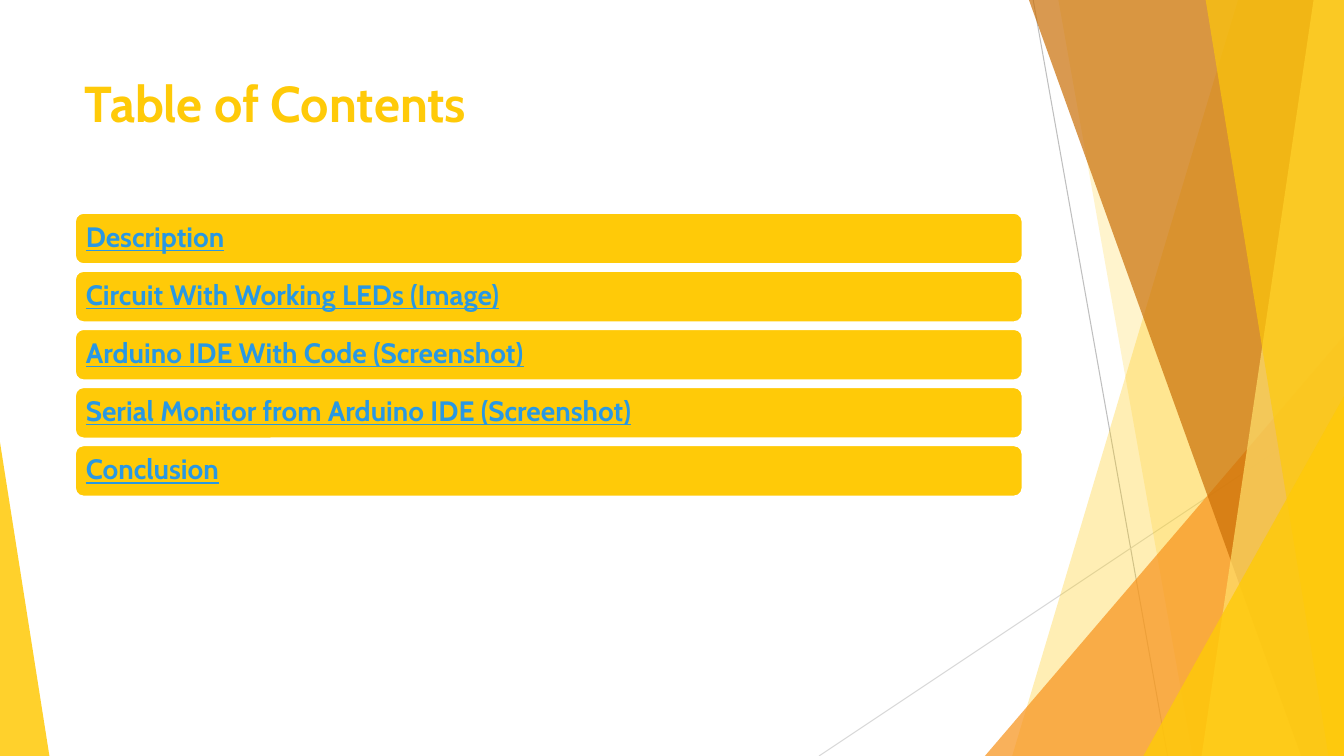
from pptx import Presentation, util as u
from pptx.dml.color import RGBColor
from pptx.enum import shapes, text
from pptx.oxml.ns import qn
from lxml import etree

HUES = {
    "gold": "FFCA08", "pale": "FFDF6B", "orange": "F8931D", "brown": "CA6F06",
    "gray": "BFBFBF", "light": "D9D9D9", "link": "2998E3", "white": "FFFFFF",
}
WIDE, HIGH = 960, 540


def paint(shape, hue, alpha=100):
    shape.shadow.inherit = False
    shape.fill.solid()
    shape.fill.fore_color.rgb = RGBColor.from_string(HUES[hue])
    shape.line.fill.background()
    if alpha < 100:
        color = shape.fill._xPr.find(qn("a:solidFill"))[0]
        etree.SubElement(color, qn("a:alpha"), val=str(alpha * 1000))


def write(para, words, size, hue):
    run = para.add_run()
    run.text = words
    run.font.name = "Cabin"
    run.font.size = u.Pt(size)
    run.font.bold = True
    run.font.color.rgb = RGBColor.from_string(HUES[hue])
    return run


deck = Presentation()
deck.slide_width, deck.slide_height = u.Pt(WIDE), u.Pt(HIGH)
slide = deck.slides.add_slide(deck.slide_layouts[6])

for x1, y1, x2, y2, hue in [
    (738, 0, 834, HIGH, "gray"),
    (WIDE, 290, 585, HIGH, "light"),
]:
    line = slide.shapes.add_connector(
        shapes.MSO_CONNECTOR.STRAIGHT, u.Pt(x1), u.Pt(y1), u.Pt(x2), u.Pt(y2))
    line.line.color.rgb = RGBColor.from_string(HUES[hue])
    line.line.width = u.Pt(0.75)
    etree.SubElement(line._element.spPr, qn("a:effectLst"))

facets = [
    ("pane", 884.3, 723, "gold", 30),
    ("pane", 756, 852, "gold", 20),
    ("wedge", 703.5, 240, "orange", 72),
    ("pane", 735, 929.5, "brown", 70),
    ("pane", 938.3, 858.3, "pale", 70),
    ("pane", 861.2, 949, "gold", 65),
    ("wedge", 816.7, 283, "gold", 80),
]
for kind, start, end, hue, alpha in facets:
    if kind == "pane":
        path = slide.shapes.build_freeform(u.Pt(start), 0)
        path.add_line_segments([
            (u.Pt(WIDE), 0), (u.Pt(WIDE), u.Pt(HIGH)), (u.Pt(end), u.Pt(HIGH))])
        facet = path.convert_to_shape()
    else:
        facet = slide.shapes.add_shape(
            shapes.MSO_SHAPE.ISOSCELES_TRIANGLE,
            u.Pt(start), u.Pt(end), u.Pt(WIDE - start), u.Pt(HIGH - end))
        facet.adjustments[0] = 1
    paint(facet, hue, alpha)

edge = slide.shapes.add_shape(
    shapes.MSO_SHAPE.ISOSCELES_TRIANGLE, 0, u.Pt(316), u.Pt(35.3), u.Pt(224))
edge.adjustments[0] = 0
paint(edge, "gold", 85)

title = slide.shapes.add_textbox(u.Pt(53.5), u.Pt(48), u.Pt(677), u.Pt(104))
title.text_frame.word_wrap = True
write(title.text_frame.paragraphs[0], "Table of Contents", 36, "gold")

topics = [
    "Description",
    "Circuit With Working LEDs (Image)",
    "Arduino IDE With Code (Screenshot)",
    "Serial Monitor from Arduino IDE (Screenshot)",
    "Conclusion",
]
for row, topic in enumerate(topics):
    bar = slide.shapes.add_shape(
        shapes.MSO_SHAPE.ROUNDED_RECTANGLE,
        u.Pt(53.5), u.Pt(152 + row * 41.5), u.Pt(677), u.Pt(36.8))
    paint(bar, "gold")
    bar.line.color.rgb = RGBColor.from_string(HUES["white"])
    bar.line.width = u.Pt(1.5)
    frame = bar.text_frame
    frame.word_wrap = True
    frame.vertical_anchor = text.MSO_ANCHOR.MIDDLE
    frame.margin_left = frame.margin_right = u.Pt(6)
    frame.margin_top = frame.margin_bottom = u.Pt(6)
    para = frame.paragraphs[0]
    para.alignment = text.PP_ALIGN.LEFT
    para.line_spacing = 0.9
    write(para, topic, 20, "link").font.underline = True

deck.save("out.pptx")
